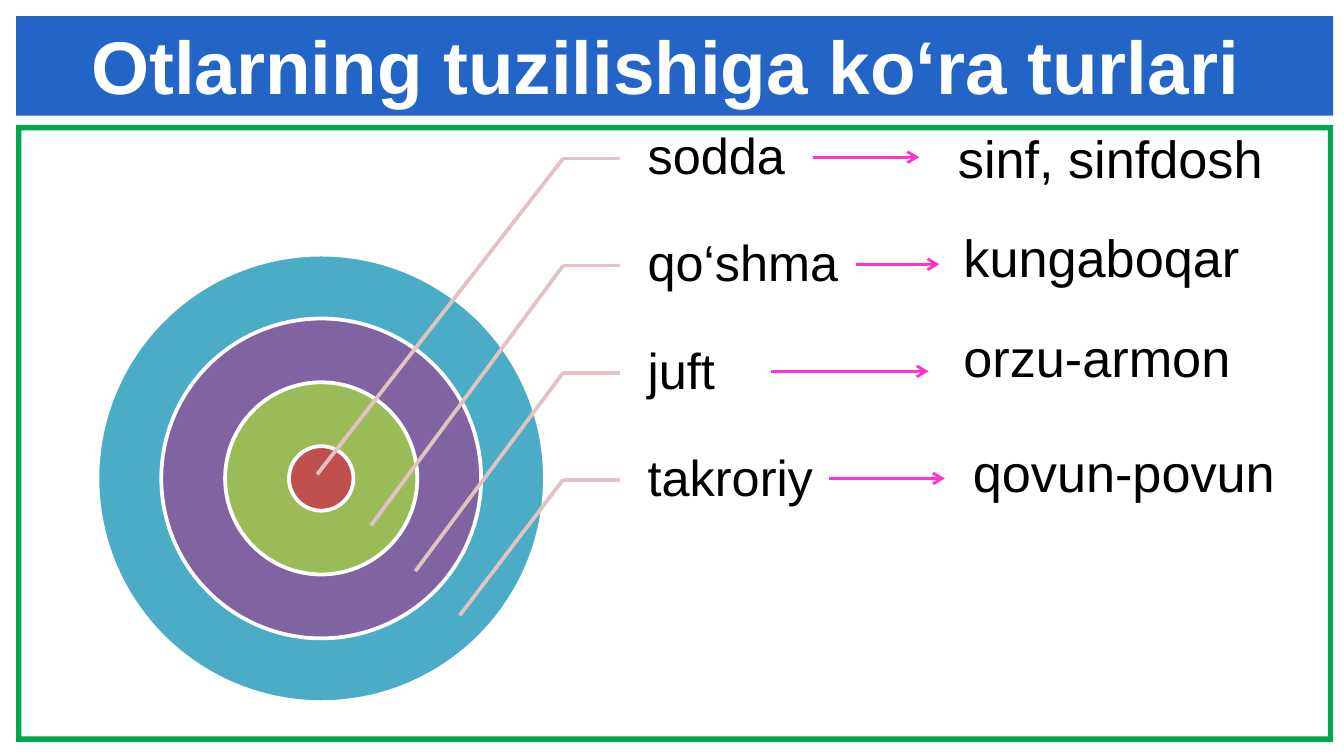
from lxml import etree
from pptx import Presentation
from pptx.dml.color import RGBColor
from pptx.enum import shapes, text
from pptx.oxml.ns import qn
from pptx.util import Inches, Pt

COLORS = {
    "banner": "2365C7", "frame": "00A650", "white": "FFFFFF", "black": "000000",
    "leader": "E2C2C2", "arrow": "FF33CC",
    "takroriy": "4BACC6", "juft": "8064A2", "qo‘shma": "9BBB59", "sodda": "C0504D",
}

deck = Presentation()
deck.slide_width, deck.slide_height = Inches(10), Inches(10 * 9 / 16)
page = deck.slides.add_slide(deck.slide_layouts[6])


def add_text(words, left, top, width, height, size, color="black"):
    box = page.shapes.add_textbox(Inches(left), Inches(top), Inches(width), Inches(height))
    box.text_frame.word_wrap = True
    para = box.text_frame.paragraphs[0]
    para.text = words
    para.font.name, para.font.size = "Arial", Pt(size)
    para.font.color.rgb = RGBColor.from_string(COLORS[color])
    return box.text_frame


def add_line(start, end, color, weight):
    line = page.shapes.add_connector(
        shapes.MSO_CONNECTOR.STRAIGHT, *[Inches(value) for value in (*start, *end)])
    line.line.color.rgb = RGBColor.from_string(COLORS[color])
    line.line.width = Pt(weight)
    etree.SubElement(line._element.spPr, qn("a:effectLst"))
    return line


# Green frame and blue title banner
for kind, color, top, height in [
    (shapes.MSO_SHAPE.FRAME, "frame", 0.93, 4.59),
    (shapes.MSO_SHAPE.RECTANGLE, "banner", 0.12, 0.74),
]:
    panel = page.shapes.add_shape(kind, Inches(0.12), Inches(top), Inches(9.8), Inches(height))
    panel.shadow.inherit = False
    panel.fill.solid()
    panel.fill.fore_color.rgb = RGBColor.from_string(COLORS[color])
    panel.line.fill.background()
    if color == "frame":
        panel.adjustments[0] = 0.04 / height

title = add_text("Otlarning tuzilishiga ko‘ra turlari", 0.68, 0.15, 8.96, 0.67, 40, "white")
title.margin_left = title.margin_right = title.margin_top = title.margin_bottom = 0
title.paragraphs[0].font.bold = True

# Concentric rings, outermost first
center_x, center_y = 2.39, 3.56
for diameter, color in [(3.33, "takroriy"), (2.38, "juft"), (1.43, "qo‘shma"), (0.48, "sodda")]:
    ring = page.shapes.add_shape(
        shapes.MSO_SHAPE.OVAL, Inches(center_x - diameter / 2), Inches(center_y - diameter / 2),
        Inches(diameter), Inches(diameter))
    ring.shadow.inherit = False
    ring.fill.solid()
    ring.fill.fore_color.rgb = RGBColor.from_string(COLORS[color])
    ring.line.color.rgb = RGBColor.from_string(COLORS["white"])
    ring.line.width = Pt(2)

# Each row: type, leader end in its ring, arrow from and to, example with its place
rows = [
    ("sodda", (2.36, 3.53), 6.05, 6.84, "sinf, sinfdosh", 7.03, 0.89, 2.5),
    ("qo‘shma", (2.76, 3.91), 6.37, 6.99, "kungaboqar", 7.07, 1.63, 2.28),
    ("juft", (3.09, 4.25), 5.74, 6.91, "orzu-armon", 7.07, 2.37, 2.22),
    ("takroriy", (3.42, 4.58), 6.17, 7.03, "qovun-povun", 7.14, 3.23, 2.48),
]
first_y, last_y = 1.18, 3.57
row_gap = (last_y - first_y) / (len(rows) - 1)
for index, (noun_type, target, arrow_from, arrow_to, example, left, top, width) in enumerate(rows):
    row_y = first_y + index * row_gap
    label = add_text(noun_type, 4.61, row_y - 0.4, 1.67, 0.8, 27)
    label.vertical_anchor = text.MSO_ANCHOR.MIDDLE
    label.margin_left = Inches(0.21)
    label.margin_right = label.margin_top = label.margin_bottom = Inches(0.04)
    label.paragraphs[0].line_spacing = 0.9

    add_line((4.19, row_y), (4.61, row_y), "leader", 2)
    add_line((4.19, row_y), target, "leader", 2)

    sample = add_text(example, left, top, width, 0.57, 28)
    sample.word_wrap = False
    sample.auto_size = text.MSO_AUTO_SIZE.SHAPE_TO_FIT_TEXT

    arrow = add_line((arrow_from, row_y - 0.01), (arrow_to, row_y - 0.01), "arrow", 1.5)
    etree.SubElement(arrow._element.spPr.find(qn("a:ln")), qn("a:tailEnd"), type="arrow")

deck.save("out.pptx")
